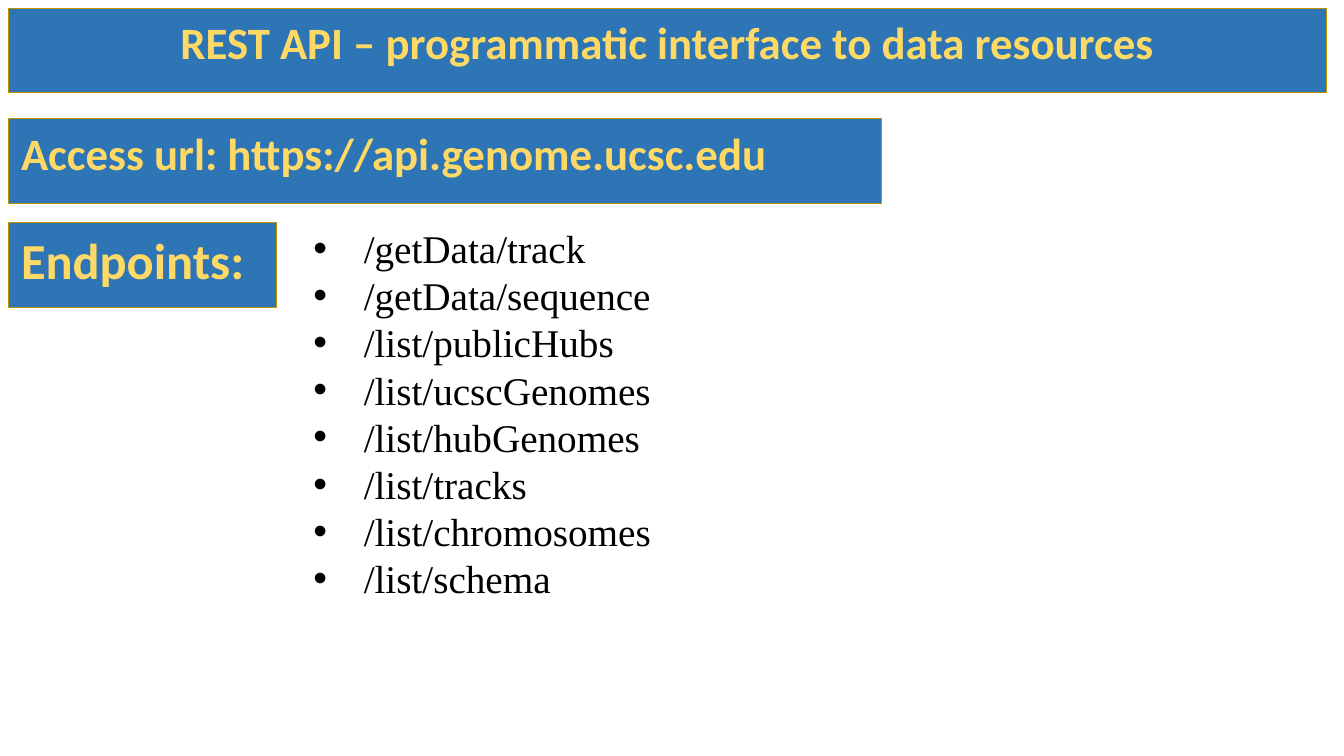
from dataclasses import dataclass

from lxml import etree
from pptx import Presentation
from pptx.dml.color import RGBColor
from pptx.enum.shapes import MSO_SHAPE
from pptx.enum.text import MSO_ANCHOR, MSO_AUTO_SIZE, PP_ALIGN
from pptx.oxml.ns import qn
from pptx.shapes.autoshape import Shape
from pptx.slide import Slide
from pptx.text.text import _Paragraph
from pptx.util import Inches, Pt

RECTANGLE = MSO_SHAPE.RECTANGLE
TOP = MSO_ANCHOR.TOP
NO_AUTOFIT = MSO_AUTO_SIZE.NONE
GROW = MSO_AUTO_SIZE.SHAPE_TO_FIT_TEXT
LEFT, CENTER = PP_ALIGN.LEFT, PP_ALIGN.CENTER


@dataclass(frozen=True)
class Theme:
    banner_fill: RGBColor = RGBColor(0x2E, 0x75, 0xB6)
    banner_line: RGBColor = RGBColor(0xBF, 0x90, 0x00)
    banner_text: RGBColor = RGBColor(0xFF, 0xD9, 0x66)
    body_text: RGBColor = RGBColor(0x00, 0x00, 0x00)
    banner_font: str = "Calibri"
    body_font: str = "Times New Roman"
    banner_size: int = 32
    label_size: int = 36
    body_size: int = 28


@dataclass(frozen=True)
class Banner:
    text: str
    top: float
    width: float
    size: int
    align: PP_ALIGN = LEFT


THEME = Theme()
BANNER_LEFT = 0.08
BANNER_HEIGHT = 0.84
BANNER_INSET = 0.13
BULLET_INDENT = 0.5

TITLE = Banner("REST API – programmatic interface to data resources",
               0.08, 13.08, THEME.banner_size, CENTER)
LABELS = [
    Banner("Access url: https://api.genome.ucsc.edu", 1.18, 8.66, THEME.banner_size),
    Banner("Endpoints:", 2.21, 2.66, THEME.label_size),
]
ENDPOINTS = [
    "/getData/track",
    "/getData/sequence",
    "/list/publicHubs",
    "/list/ucscGenomes",
    "/list/hubGenomes",
    "/list/tracks",
    "/list/chromosomes",
    "/list/schema",
]


def write_text(para: _Paragraph, text: str, *, font: str, size: int,
               color: RGBColor, bold: bool = False, align: PP_ALIGN = LEFT) -> None:
    para.alignment = align
    span = para.add_run()
    span.text = text
    span.font.name = font
    span.font.size = Pt(size)
    span.font.bold = bold
    span.font.color.rgb = color


def format_banner(box: Shape, banner: Banner) -> None:
    box.left, box.top = Inches(BANNER_LEFT), Inches(banner.top)
    box.width, box.height = Inches(banner.width), Inches(BANNER_HEIGHT)
    box.shadow.inherit = False
    box.fill.solid()
    box.fill.fore_color.rgb = THEME.banner_fill
    box.line.color.rgb = THEME.banner_line
    box.line.width = Pt(0.75)
    frame = box.text_frame
    frame.word_wrap = True
    frame.auto_size = NO_AUTOFIT
    frame.vertical_anchor = TOP
    frame.margin_left = frame.margin_right = Inches(BANNER_INSET)
    frame.margin_top = frame.margin_bottom = Inches(BANNER_INSET)
    para = frame.paragraphs[0]
    para.line_spacing = 0.9
    para.space_after = Pt(21.3)
    write_text(para, banner.text, font=THEME.banner_font, size=banner.size,
               color=THEME.banner_text, bold=True, align=banner.align)


def add_bullet(para: _Paragraph) -> None:
    properties = para._p.get_or_add_pPr()
    properties.set("marL", str(Inches(BULLET_INDENT)))
    properties.set("indent", str(-Inches(BULLET_INDENT)))
    etree.SubElement(properties, qn("a:buFont")).set("typeface", "Arial")
    etree.SubElement(properties, qn("a:buChar")).set("char", "•")


def add_endpoints(page: Slide) -> None:
    box = page.shapes.add_textbox(Inches(3.01), Inches(2.18), Inches(7.56), Inches(3.87))
    frame = box.text_frame
    frame.word_wrap = True
    frame.auto_size = GROW
    for index, endpoint in enumerate(ENDPOINTS):
        para = frame.add_paragraph() if index else frame.paragraphs[0]
        add_bullet(para)
        write_text(para, endpoint, font=THEME.body_font, size=THEME.body_size,
                   color=THEME.body_text)


def main() -> None:
    deck = Presentation()
    deck.slide_width, deck.slide_height = Inches(13.33), Inches(7.5)
    page = deck.slides.add_slide(deck.slide_layouts[5])
    format_banner(page.shapes.title, TITLE)
    for label in LABELS:
        box = page.shapes.add_shape(RECTANGLE, 0, 0, 0, 0)
        format_banner(box, label)
    add_endpoints(page)
    deck.save("out.pptx")


if __name__ == "__main__":
    main()
